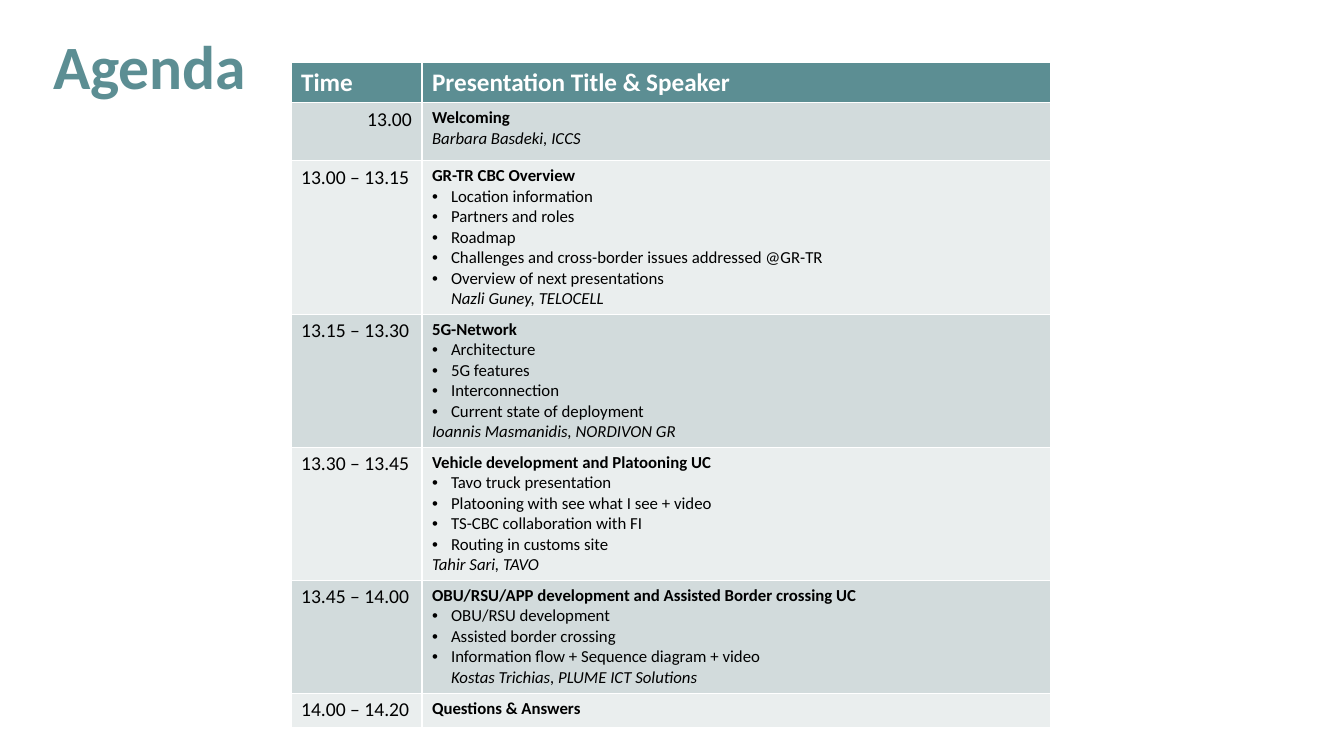
from dataclasses import dataclass

from lxml import etree
from pptx import Presentation
from pptx.dml.color import RGBColor
from pptx.enum.text import MSO_ANCHOR, MSO_AUTO_SIZE, PP_ALIGN
from pptx.oxml.ns import qn
from pptx.util import Emu, Pt

LEFT, RIGHT = PP_ALIGN.LEFT, PP_ALIGN.RIGHT
MIDDLE = MSO_ANCHOR.MIDDLE
NO_AUTOFIT = MSO_AUTO_SIZE.NONE

EMU_PER_PX = 914400 / 100.8
TITLE_ONLY_LAYOUT = 5
FONT = "Calibri"
TEAL, WHITE, BLACK = "5C8E93", "FFFFFF", "000000"
BANDS = ("D2DBDC", "EAEEEE")
COLUMN_WIDTHS = (131, 629)
HEADER_HEIGHT = 40
BULLET_INDENT = 19


@dataclass(frozen=True)
class Session:
    time: str
    title: str
    height: int
    topics: tuple[str, ...] = ()
    speaker: str = ""
    speaker_on_own_paragraph: bool = False
    time_align: PP_ALIGN = LEFT


SESSIONS = (
    Session("13.00", "Welcoming", 58, speaker="Barbara Basdeki, ICCS", time_align=RIGHT),
    Session("13.00 – 13.15", "GR-TR CBC Overview", 153,
            ("Location information", "Partners and roles", "Roadmap",
             "Challenges and cross-border issues addressed @GR-TR",
             "Overview of next presentations"),
            "Nazli Guney, TELOCELL"),
    Session("13.15 – 13.30", "5G-Network", 133,
            ("Architecture", "5G features", "Interconnection",
             "Current state of deployment"),
            "Ioannis Masmanidis, NORDIVON GR", speaker_on_own_paragraph=True),
    Session("13.30 – 13.45", "Vehicle development and Platooning UC", 133,
            ("Tavo truck presentation", "Platooning with see what I see + video",
             "TS-CBC collaboration with FI", "Routing in customs site"),
            "Tahir Sari, TAVO", speaker_on_own_paragraph=True),
    Session("13.45 – 14.00", "OBU/RSU/APP development and Assisted Border crossing UC", 113,
            ("OBU/RSU development", "Assisted border crossing",
             "Information flow + Sequence diagram + video"),
            "Kostas Trichias, PLUME ICT Solutions"),
    Session("14.00 – 14.20", "Questions & Answers", 33),
)


def px(length: int) -> Emu:
    return Emu(round(length * EMU_PER_PX))


def color(value: str) -> RGBColor:
    return RGBColor.from_string(value)


def write(paragraph, text: str, *, size: int, ink: str = BLACK, bold: bool = False,
          italic: bool = False, align: PP_ALIGN = LEFT) -> None:
    paragraph.alignment = align
    run = paragraph.add_run()
    run.text = text
    font = run.font
    font.name, font.size = FONT, Pt(size)
    font.bold, font.italic = bold, italic
    font.color.rgb = color(ink)


def add_bullet(paragraph) -> None:
    properties = paragraph._p.get_or_add_pPr()
    properties.set("marL", str(px(BULLET_INDENT)))
    properties.set("indent", str(-px(BULLET_INDENT)))
    etree.SubElement(properties, qn("a:buFont"), typeface="Arial")
    etree.SubElement(properties, qn("a:buChar"), char="•")


def fill_cell(cell, fill: str) -> None:
    cell.fill.solid()
    cell.fill.fore_color.rgb = color(fill)


def write_session(frame, session: Session) -> None:
    paragraph = frame.paragraphs[0]
    write(paragraph, session.title, size=12, bold=True)
    for topic in session.topics:
        paragraph = frame.add_paragraph()
        add_bullet(paragraph)
        write(paragraph, topic, size=12)
    if session.speaker:
        if session.speaker_on_own_paragraph:
            paragraph = frame.add_paragraph()
        else:
            paragraph.add_line_break()
        write(paragraph, session.speaker, size=12, italic=True)


def add_heading(slide) -> None:
    heading = slide.shapes.title
    heading.left, heading.top = px(53), px(36)
    heading.width, heading.height = px(378), px(70)
    frame = heading.text_frame
    frame.margin_left = frame.margin_right = frame.margin_top = frame.margin_bottom = 0
    frame.word_wrap = True
    frame.auto_size = NO_AUTOFIT
    frame.vertical_anchor = MIDDLE
    frame.paragraphs[0].line_spacing = 0.85
    write(frame.paragraphs[0], "Agenda", size=44, ink=TEAL, bold=True)


def add_agenda(slide) -> None:
    heights = [HEADER_HEIGHT, *(session.height for session in SESSIONS)]
    agenda = slide.shapes.add_table(len(heights), len(COLUMN_WIDTHS), px(291), px(62),
                                    px(sum(COLUMN_WIDTHS)), px(sum(heights))).table
    for column, width in zip(agenda.columns, COLUMN_WIDTHS):
        column.width = px(width)
    for row, height in zip(agenda.rows, heights):
        row.height = px(height)

    for cell, label in zip(agenda.rows[0].cells, ("Time", "Presentation Title & Speaker")):
        fill_cell(cell, TEAL)
        write(cell.text_frame.paragraphs[0], label, size=18, ink=WHITE, bold=True)
    for index, session in enumerate(SESSIONS):
        time_cell, session_cell = agenda.rows[index + 1].cells
        for cell in (time_cell, session_cell):
            fill_cell(cell, BANDS[index % len(BANDS)])
        write(time_cell.text_frame.paragraphs[0], session.time, size=14,
              align=session.time_align)
        write_session(session_cell.text_frame, session)


def main() -> None:
    deck = Presentation()
    deck.slide_width, deck.slide_height = px(1344), px(756)
    slide = deck.slides.add_slide(deck.slide_layouts[TITLE_ONLY_LAYOUT])
    add_heading(slide)
    add_agenda(slide)
    deck.save("out.pptx")


if __name__ == "__main__":
    main()
